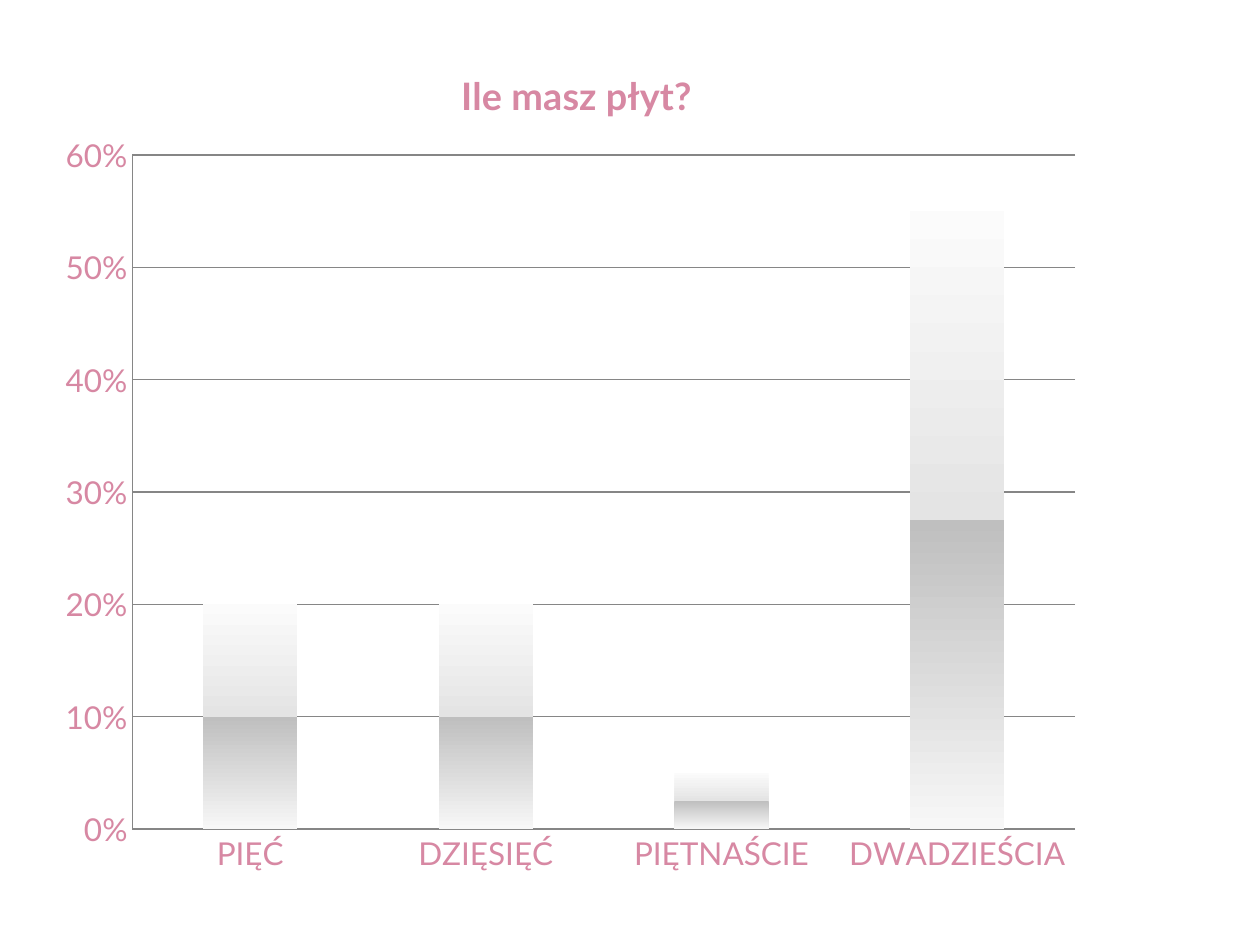
from pptx import Presentation
from pptx.chart.data import CategoryChartData
from pptx.dml.color import RGBColor
from pptx.enum.chart import XL_CHART_TYPE, XL_TICK_MARK
from pptx.oxml import parse_xml
from pptx.oxml.ns import nsdecls
from pptx.util import Pt

COLUMNS = XL_CHART_TYPE.COLUMN_CLUSTERED
NO_TICK = XL_TICK_MARK.NONE
FONT = "Lato"
COLORS = {
    "label": "D788A3",
    "line": "868686",
    "top": "FBFBFB",
    "upper_middle": "E4E4E4",
    "lower_middle": "BFBFBF",
    "bottom": "F7F7F7",
}
BAR_STOPS = [(0, "top"), (50, "upper_middle"), (50, "lower_middle"), (100, "bottom")]
ANSWERS = {"PIĘĆ": 0.2, "DZIĘSIĘĆ": 0.2, "PIĘTNAŚCIE": 0.05, "DWADZIEŚCIA": 0.55}


def color(name):
    return RGBColor.from_string(COLORS[name])


def style_font(font, size, bold=False):
    font.name = FONT
    font.size = Pt(size)
    font.bold = bold
    font.color.rgb = color("label")


def style_line(line):
    line.color.rgb = color("line")
    line.width = Pt(0.75)


def manual_layout(inner=False, **fractions):
    target = '<c:layoutTarget val="inner"/>' if inner else ""
    modes = "".join(f'<c:{key}Mode val="edge"/>' for key in "xy")
    values = "".join(f'<c:{key} val="{value}"/>' for key, value in fractions.items())
    return parse_xml(
        f'<c:layout {nsdecls("c")}><c:manualLayout>{target}{modes}{values}'
        "</c:manualLayout></c:layout>"
    )


def add_title(chart, question):
    title = chart.chart_title
    run = title.text_frame.paragraphs[0].add_run()
    run.text = question
    style_font(run.font, 21.6, bold=True)
    title.include_in_layout = False
    element = chart._chartSpace.chart.find("{*}title")
    for layout in element.findall("{*}layout"):
        element.remove(layout)
    element.find("{*}tx").addnext(manual_layout(x=0.39, y=0.04))


def place_plot(chart):
    plot_area = chart._chartSpace.chart.plotArea
    for layout in plot_area.findall("{*}layout"):
        plot_area.remove(layout)
    plot_area.insert(0, manual_layout(inner=True, x=0.084, y=0.149, w=0.896, h=0.781))


def style_axes(chart):
    for axis in (chart.category_axis, chart.value_axis):
        axis.major_tick_mark = NO_TICK
        axis.minor_tick_mark = NO_TICK
        style_font(axis.tick_labels.font, 18)
        style_line(axis.format.line)
    percent = chart.value_axis
    percent.minimum_scale = 0
    percent.maximum_scale = 0.6
    percent.major_unit = 0.1
    percent.tick_labels.number_format = "0%"
    percent.tick_labels.number_format_is_linked = False
    style_line(percent.major_gridlines.format.line)


def fill_bars(plot):
    plot.gap_width = 150
    plot.vary_by_categories = False
    bars = plot.series[0]
    bars.invert_if_negative = False
    stops = "".join(
        f'<a:gs pos="{percent * 1000}"><a:srgbClr val="{COLORS[name]}"/></a:gs>'
        for percent, name in BAR_STOPS
    )
    bars._element.get_or_add_spPr().append(parse_xml(
        f'<a:gradFill {nsdecls("a")} rotWithShape="1"><a:gsLst>{stops}</a:gsLst>'
        '<a:lin ang="5400000" scaled="0"/></a:gradFill>'
    ))
    bars.format.line.fill.background()


def add_survey_chart(slide):
    survey = CategoryChartData(number_format="0%")
    survey.categories = list(ANSWERS)
    survey.add_series("Series 1", list(ANSWERS.values()))
    frame = slide.shapes.add_chart(COLUMNS, Pt(25.2), Pt(15.1), Pt(601.2), Pt(493.2), survey)
    chart = frame.chart
    chart.has_legend = False
    style_font(chart.font, 18)
    add_title(chart, "Ile masz płyt?")
    place_plot(chart)
    style_axes(chart)
    fill_bars(chart.plots[0])


def main():
    presentation = Presentation()
    presentation.slide_width = Pt(720)
    presentation.slide_height = Pt(540)
    slide = presentation.slides.add_slide(presentation.slide_layouts[6])
    add_survey_chart(slide)
    presentation.save("out.pptx")


if __name__ == "__main__":
    main()
